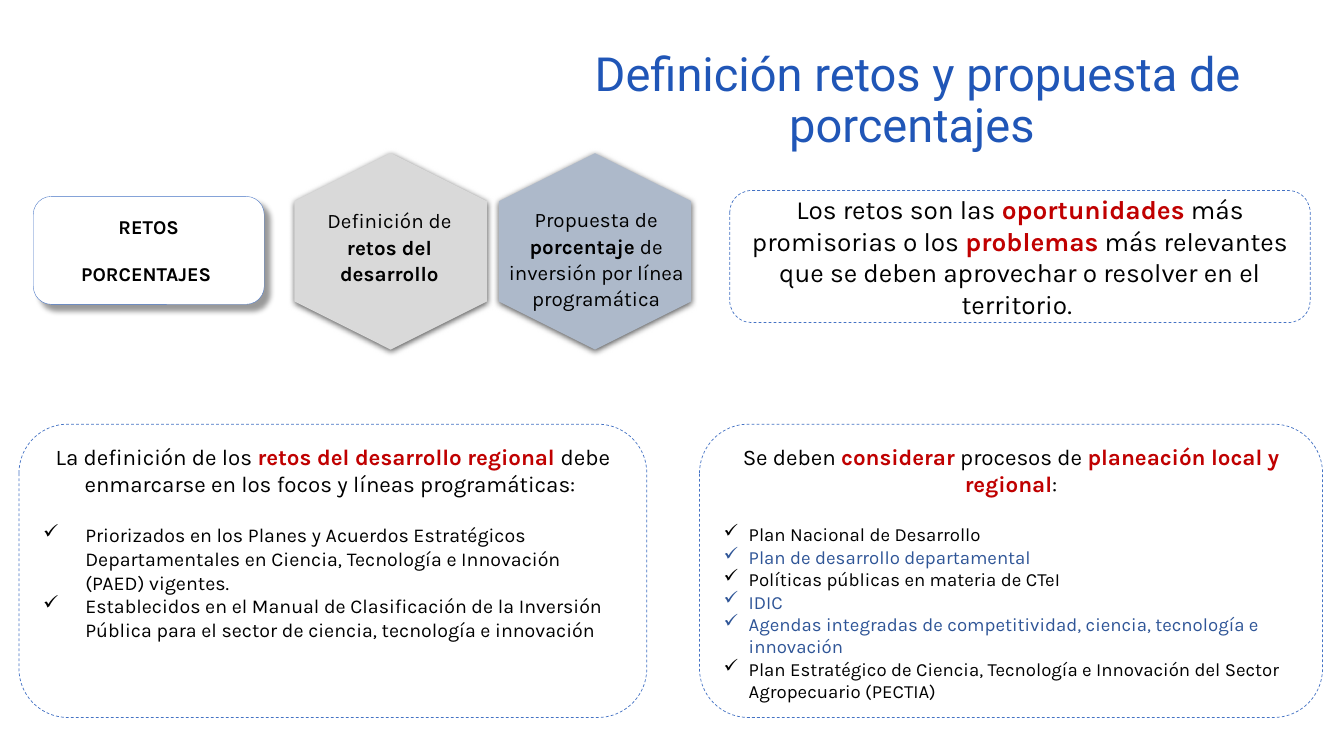
from dataclasses import dataclass

from lxml.etree import SubElement
from pptx import Presentation
from pptx.dml.color import RGBColor
from pptx.enum.dml import MSO_LINE
from pptx.enum.shapes import MSO_SHAPE
from pptx.enum.text import MSO_ANCHOR, MSO_AUTO_SIZE, PP_ALIGN
from pptx.oxml.ns import qn
from pptx.util import Cm, Pt


@dataclass(frozen=True)
class Theme:
    heading_font: str = "Roboto"
    body_font: str = "Karla"
    title: str = "2056B7"
    text: str = "000000"
    accent: str = "C00000"
    link: str = "2F5597"
    border: str = "4472C4"
    white: str = "FFFFFF"
    grey: str = "D9D9D9"
    slate: str = "ADB9CA"
    title_size: float = 33.6
    definition_size: float = 18.7
    intro_size: float = 16
    hexagon_size: float = 14.7
    body_size: float = 14
    plan_size: float = 13.3


theme = Theme()


def write(paragraph, text, size, color=theme.text, bold_color=theme.text,
          font=theme.body_font, **layout):
    """Write text in which *stars* mark the bold parts; layout holds paragraph attributes."""
    for name, value in layout.items():
        setattr(paragraph, name, value)
    for index, part in enumerate(text.split("*")):
        if not part:
            continue
        run = paragraph.add_run()
        run.text = part
        bold = index % 2 == 1
        style = {"name": font, "size": Pt(size), "bold": bold}
        for name, value in style.items():
            setattr(run.font, name, value)
        run.font.color.rgb = RGBColor.from_string(bold_color if bold else color)


def add_box(kind, frame, fill=None, line_width=None, dashed=False, shadow=None):
    """Add a preset shape; shadow is (opacity %, blur pt, distance pt, degrees)."""
    box = slide.shapes.add_shape(kind, *map(Cm, frame))
    box.shadow.inherit = False
    if fill:
        box.fill.solid()
        box.fill.fore_color.rgb = RGBColor.from_string(fill)
    else:
        box.fill.background()
    if line_width:
        box.line.color.rgb = RGBColor.from_string(theme.border)
        box.line.width = Pt(line_width)
    else:
        box.line.fill.background()
    if dashed:
        box.line.dash_style = MSO_LINE.DASH
    if shadow:
        opacity, blur, distance, degrees = shadow
        effects = box._element.spPr.find(qn("a:effectLst"))
        outer = SubElement(effects, qn("a:outerShdw"), blurRad=str(Pt(blur)),
                           dist=str(Pt(distance)), dir=str(degrees * 60000),
                           algn="ctr", rotWithShape="0")
        shade = SubElement(outer, qn("a:srgbClr"), val=theme.text)
        SubElement(shade, qn("a:alpha"), val=str(opacity * 1000))
    box.text_frame.word_wrap = True
    return box


presentation = Presentation()
presentation.slide_width, presentation.slide_height = Cm(33.87), Cm(19.05)
slide = presentation.slides.add_slide(presentation.slide_layouts[5])

# Title
title = slide.shapes.title
title_format = {"left": Cm(12.65), "top": Cm(1.37), "width": Cm(20.96), "height": Cm(2.39)}
for name, value in title_format.items():
    setattr(title, name, value)
title.text_frame.word_wrap = True
title.text_frame.auto_size = MSO_AUTO_SIZE.NONE
title.text_frame.vertical_anchor = MSO_ANCHOR.MIDDLE
write(title.text_frame.paragraphs[0], "Definición retos y propuesta de porcentajes ",
      theme.title_size, theme.title, font=theme.heading_font,
      alignment=PP_ALIGN.CENTER, line_spacing=0.9)

# Topic card
topics = add_box(MSO_SHAPE.ROUNDED_RECTANGLE, (0.84, 4.95, 5.82, 2.72), theme.white, 0.25,
                 shadow=(40, 4, 6, 45)).text_frame
topics.vertical_anchor = MSO_ANCHOR.MIDDLE
write(topics.paragraphs[0], "*RETOS*", theme.body_size, alignment=PP_ALIGN.CENTER)
write(topics.add_paragraph(), "*PORCENTAJES *", theme.body_size,
      alignment=PP_ALIGN.CENTER, space_before=Pt(16.5))

# Hexagons with their labels
hexagons = [
    (7.37, theme.grey, (7.54, 5.08, 4.55, 2.21), "Definición de *retos del desarrollo*"),
    (12.52, theme.slate, (12.5, 5.05, 5.05, 2.9),
     "Propuesta de *porcentaje* de inversión por línea programática"),
]
for left, fill, label_frame, step in hexagons:
    hexagon = add_box(MSO_SHAPE.HEXAGON, (left, 3.91, 4.95, 4.85), fill,
                      shadow=(63, 4.5, 1.5, 90))
    hexagon.rotation = 90
    label = slide.shapes.add_textbox(*map(Cm, label_frame)).text_frame
    label.word_wrap = True
    label.auto_size = MSO_AUTO_SIZE.SHAPE_TO_FIT_TEXT
    write(label.paragraphs[0], step, theme.hexagon_size,
          alignment=PP_ALIGN.CENTER, line_spacing=1.07)

# Definition
definition = add_box(MSO_SHAPE.ROUNDED_RECTANGLE, (18.39, 4.8, 14.63, 3.33),
                     line_width=0.5, dashed=True).text_frame
definition.vertical_anchor = MSO_ANCHOR.MIDDLE
write(definition.paragraphs[0],
      "Los retos son las *oportunidades* más promisorias o los *problemas* más relevantes "
      "que se deben aprovechar o resolver en el territorio. ",
      theme.definition_size, bold_color=theme.accent, alignment=PP_ALIGN.CENTER)

# Checklist panels: left, width, indent, item size, introduction, items
panels = [
    (0.48, 15.82, 1.06, theme.body_size,
     "La definición de los *retos del desarrollo regional *debe enmarcarse en los focos "
     "y líneas programáticas: ",
     [("Priorizados en los Planes y Acuerdos Estratégicos Departamentales en Ciencia, "
       "Tecnología e Innovación (PAED) vigentes.", theme.text),
      ("Establecidos en el Manual de Clasificación de la Inversión Pública para el sector "
       "de ciencia, tecnología e innovación", theme.text)]),
    (17.63, 15.7, 0.63, theme.plan_size,
     "Se deben *considerar* procesos de *planeación local y regional*:",
     [("Plan Nacional de Desarrollo", theme.text),
      ("Plan de desarrollo departamental", theme.link),
      ("Políticas públicas en materia de CTeI", theme.text),
      ("IDIC", theme.link),
      ("Agendas integradas de competitividad, ciencia, tecnología e innovación", theme.link),
      ("Plan Estratégico de Ciencia, Tecnología e Innovación del Sector Agropecuario (PECTIA)",
       theme.text)]),
]
for left, width, indent, item_size, introduction, items in panels:
    panel = add_box(MSO_SHAPE.ROUNDED_RECTANGLE, (left, 10.69, width, 7.39),
                    line_width=0.5, dashed=True).text_frame
    panel.vertical_anchor = MSO_ANCHOR.TOP
    write(panel.paragraphs[0], introduction, theme.intro_size, bold_color=theme.accent,
          alignment=PP_ALIGN.CENTER)
    for index, (item, color) in enumerate(items):
        entry = panel.add_paragraph()
        write(entry, item, item_size, color, alignment=PP_ALIGN.LEFT,
              space_before=Pt(0 if index else 18.7))
        properties = entry._p.get_or_add_pPr()
        properties.set("marL", str(Cm(indent)))
        properties.set("indent", str(-Cm(indent)))
        SubElement(properties, qn("a:buChar"), char="✓")

presentation.save("out.pptx")
